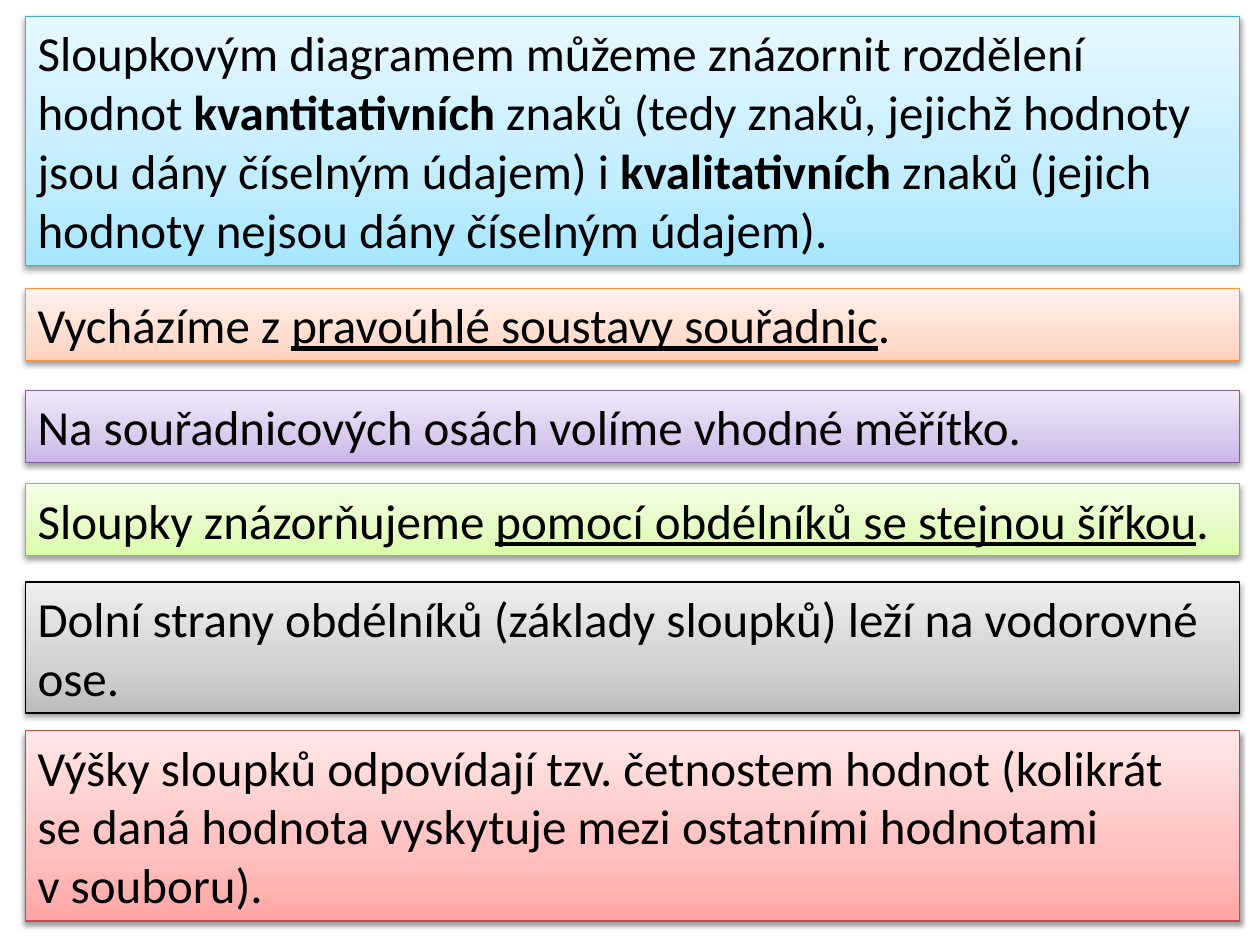
from copy import deepcopy

from pptx import Presentation
from pptx.dml.color import RGBColor
from pptx.enum.text import MSO_AUTO_SIZE
from pptx.oxml import parse_xml
from pptx.oxml.ns import nsdecls, qn
from pptx.util import Inches, Pt

THEME = {
    "font": "Calibri",
    "size": Pt(28),
    "text": "000000",
    "line_width": Pt(0.75),
    # outline, then gradient from bottom to top
    "blue": ("46AAC5", "A7E6FF", "C1EDFF", "E7F8FF"),
    "orange": ("F69240", "FFD2BD", "FFDED0", "FFF2ED"),
    "purple": ("7D60A0", "C9B5E8", "D8CBEE", "F0EAF9"),
    "green": ("98B955", "DAFDA7", "E4FCC2", "F5FFE7"),
    "grey": ("000000", "BDBDBD", "D1D1D1", "EEEEEE"),
    "red": ("BF4C48", "FFA6A5", "FFC0BF", "FFE7E7"),
}
STOP_POSITIONS = (0, 0.35, 1)
SHADOW = (
    f'<a:effectLst {nsdecls("a")}>'
    '<a:outerShdw blurRad="40000" dist="20000" dir="5400000" rotWithShape="0">'
    '<a:srgbClr val="000000"><a:alpha val="38000"/></a:srgbClr>'
    "</a:outerShdw></a:effectLst>"
)

# Each statement: theme colour, top, text lines, paragraphs of (text, emphasis) runs
STATEMENTS = [
    ("blue", 0.13, 4, [
        [("Sloupkovým diagramem můžeme znázornit rozdělení", "")],
        [("hodnot ", ""), ("kvantitativních", "bold"),
         (" znaků (tedy znaků, jejichž hodnoty jsou dány číselným údajem) i ", ""),
         ("kvalitativních", "bold"), (" znaků (jejich", "")],
        [("hodnoty nejsou dány číselným údajem).", "")],
    ]),
    ("orange", 2.29, 1, [
        [("Vycházíme z ", ""), ("pravoúhlé soustavy souřadnic", "underline"), (".", "")],
    ]),
    ("purple", 3.1, 1, [
        [("Na souřadnicových osách volíme vhodné měřítko.", "")],
    ]),
    ("green", 3.84, 1, [
        [("Sloupky znázorňujeme ", ""),
         ("pomocí obdélníků se stejnou šířkou", "underline"), (".", "")],
    ]),
    ("grey", 4.62, 2, [
        [("Dolní strany obdélníků (základy sloupků) leží na vodorovné ose.", "")],
    ]),
    ("red", 5.8, 3, [
        [("Výšky sloupků odpovídají tzv. četnostem hodnot (kolikrát", "")],
        [("se daná hodnota vyskytuje mezi ostatními hodnotami", "")],
        [("v souboru).", "")],
    ]),
]

presentation = Presentation()
presentation.slide_width = Inches(10)
presentation.slide_height = Inches(7.5)
slide = presentation.slides.add_slide(presentation.slide_layouts[6])

left = presentation.slide_width * 0.02
width = presentation.slide_width * 0.964
line_height = Inches(0.47)
padding = Inches(0.1)

for colour, top, line_count, paragraphs in STATEMENTS:
    outline, *gradient = THEME[colour]
    panel = slide.shapes.add_textbox(
        int(left), Inches(top), int(width), line_count * line_height + padding)

    panel.fill.gradient()
    stop_list = panel.fill._xPr.find(qn("a:gradFill")).find(qn("a:gsLst"))
    stop_list.append(deepcopy(stop_list[0]))
    panel.fill.gradient_angle = 90
    for stop, position, shade in zip(panel.fill.gradient_stops, STOP_POSITIONS, gradient):
        stop.position = position
        stop.color.rgb = RGBColor.from_string(shade)
    panel.line.color.rgb = RGBColor.from_string(outline)
    panel.line.width = THEME["line_width"]
    panel._element.spPr.append(parse_xml(SHADOW))

    frame = panel.text_frame
    frame.word_wrap = True
    frame.auto_size = MSO_AUTO_SIZE.SHAPE_TO_FIT_TEXT
    for index, runs in enumerate(paragraphs):
        paragraph = frame.add_paragraph() if index else frame.paragraphs[0]
        for wording, emphasis in runs:
            run = paragraph.add_run()
            run.text = wording
            run.font.name = THEME["font"]
            run.font.size = THEME["size"]
            run.font.color.rgb = RGBColor.from_string(THEME["text"])
            if emphasis:
                setattr(run.font, emphasis, True)

presentation.save("out.pptx")
